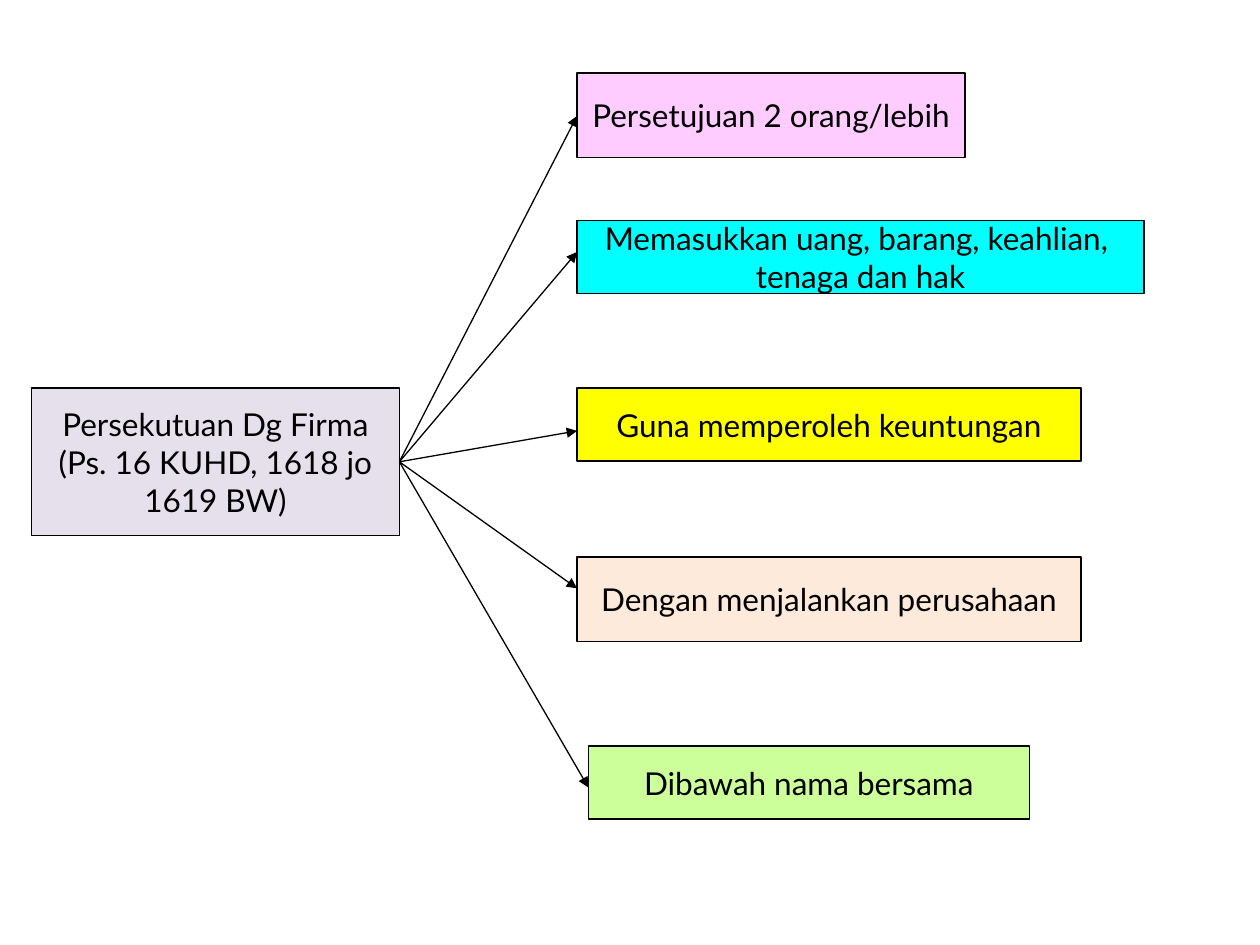
from lxml import etree
from pptx import Presentation
from pptx import util as u
from pptx.dml.color import RGBColor
from pptx.enum import shapes, text
from pptx.oxml import ns

BLACK = RGBColor(0x00, 0x00, 0x00)
LAVENDER = RGBColor(0xE6, 0xE0, 0xEC)
PINK = RGBColor(0xFF, 0xCC, 0xFF)
CYAN = RGBColor(0x00, 0xFF, 0xFF)
YELLOW = RGBColor(0xFF, 0xFF, 0x00)
PEACH = RGBColor(0xFD, 0xEA, 0xDA)
GREEN = RGBColor(0xCC, 0xFF, 0x99)

FONT_FORMAT = {"name": "Lato", "size": u.Pt(18)}
FRAME_FORMAT = {"word_wrap": False, "vertical_anchor": text.MSO_ANCHOR.MIDDLE}
LINE_WIDTH = u.Pt(0.75)

TOPIC_BOX = (0.25, 3.08, 2.92, 1.17)
TOPIC_LINES = ["Persekutuan Dg Firma", "(Ps. 16 KUHD, 1618 jo", "1619 BW)"]

# Each element: box (left, top, width, height), fill, lines, height of arrow tip
ELEMENTS = [
    ((4.58, 0.58, 3.08, 0.67), PINK, ["Persetujuan 2 orang/lebih"], 0.92),
    ((4.58, 1.75, 4.5, 0.58), CYAN,
     ["Memasukkan uang, barang, keahlian, ", "tenaga dan hak"], 2),
    ((4.58, 3.08, 4, 0.58), YELLOW, ["Guna memperoleh keuntungan"], 3.42),
    ((4.58, 4.42, 4, 0.67), PEACH, ["Dengan menjalankan perusahaan"], 4.67),
    ((4.67, 5.92, 3.5, 0.58), GREEN, ["Dibawah nama bersama"], 6.25),
]


def apply_format(target, values):
    for name, value in values.items():
        setattr(target, name, value)


def add_box(slide, box, fill, lines):
    """Outlined rectangle with one centred paragraph per line."""
    shape = slide.shapes.add_shape(
        shapes.MSO_SHAPE.RECTANGLE, *map(u.Inches, box))
    shape.shadow.inherit = False
    shape.fill.solid()
    shape.fill.fore_color.rgb = fill
    shape.line.color.rgb = BLACK
    shape.line.width = LINE_WIDTH

    frame = shape.text_frame
    apply_format(frame, FRAME_FORMAT)
    for index, line in enumerate(lines):
        paragraph = frame.add_paragraph() if index else frame.paragraphs[0]
        paragraph.alignment = text.PP_ALIGN.CENTER
        run = paragraph.add_run()
        run.text = line
        apply_format(run.font, FONT_FORMAT)
        run.font.color.rgb = BLACK


def add_arrow(slide, start, end):
    """Straight line with a triangle at its end."""
    connector = slide.shapes.add_connector(
        shapes.MSO_CONNECTOR.STRAIGHT, *map(u.Inches, start + end))
    connector.line.color.rgb = BLACK
    connector.line.width = LINE_WIDTH
    etree.SubElement(connector.line._get_or_add_ln(),
                     ns.qn("a:tailEnd"), type="triangle")
    etree.SubElement(connector._element.spPr, ns.qn("a:effectLst"))


def add_fan(slide, topic_box, elements):
    """Topic on the left, with an arrow to each of its elements."""
    left, top, width, height = topic_box
    add_box(slide, topic_box, LAVENDER, TOPIC_LINES)
    for box, fill, lines, _ in elements:
        add_box(slide, box, fill, lines)

    # Arrows from the middle of the topic's right edge
    start = (left + width, top + height / 2)
    for box, _, _, tip in elements:
        add_arrow(slide, start, (box[0], tip))


def main():
    presentation = Presentation()
    presentation.slide_width = u.Inches(10)
    presentation.slide_height = u.Inches(7.5)
    slide = presentation.slides.add_slide(presentation.slide_layouts[6])
    add_fan(slide, TOPIC_BOX, ELEMENTS)
    presentation.save("out.pptx")


if __name__ == "__main__":
    main()
